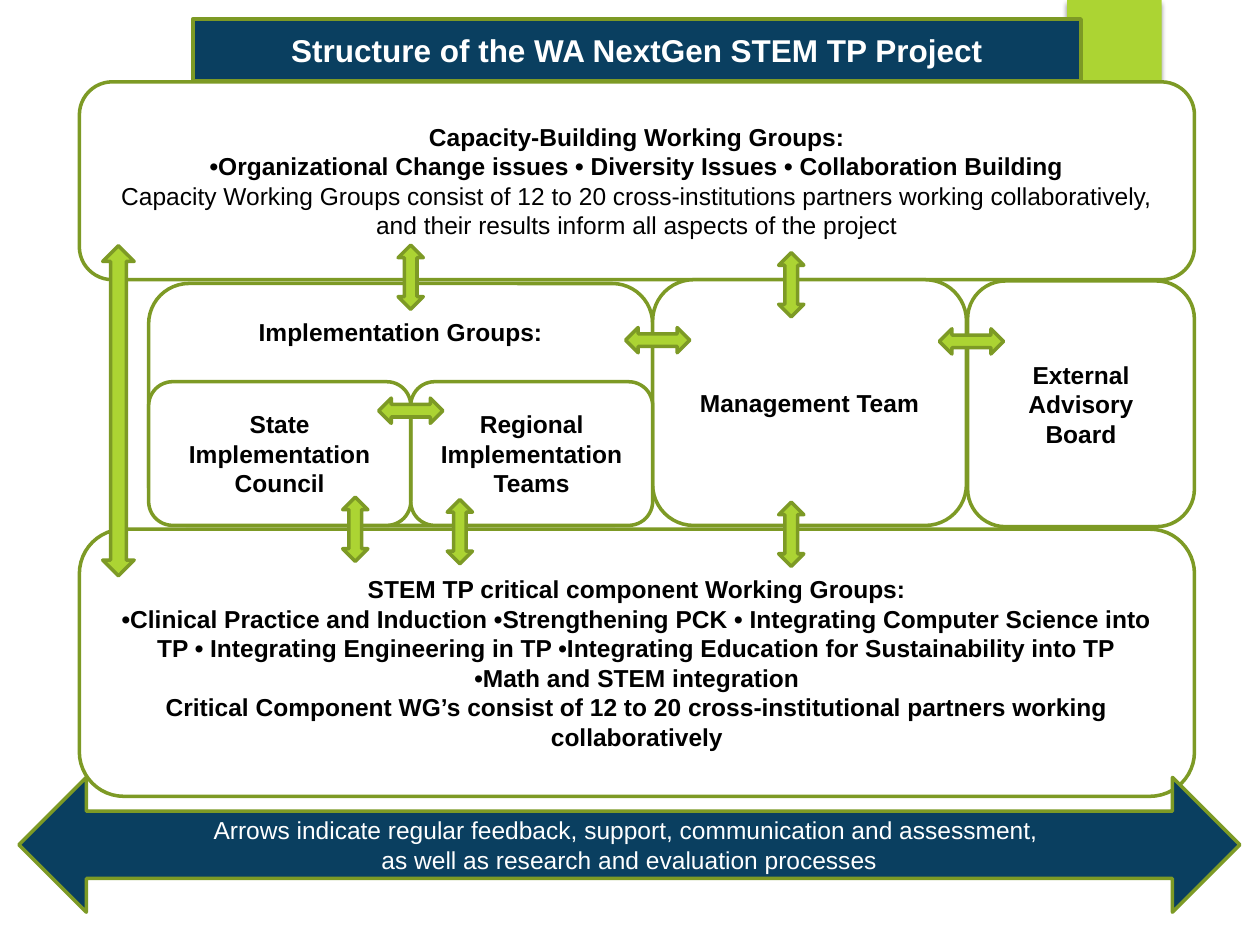
from typing import NamedTuple

from lxml.etree import SubElement
from pptx import Presentation
from pptx.dml.color import RGBColor
from pptx.enum.shapes import MSO_SHAPE
from pptx.enum.text import MSO_ANCHOR, MSO_AUTO_SIZE, PP_ALIGN
from pptx.oxml import parse_xml
from pptx.oxml.ns import nsdecls
from pptx.util import Inches, Pt

HUES = {"navy": "0A3F60", "lime": "ACD433", "olive": "7D9A25",
        "white": "FFFFFF", "black": "000000"}
HEAD = 0.51  # length of a short arrow


class Box(NamedTuple):
    left: float
    top: float
    width: float
    height: float
    lines: list[str]
    plain: tuple[int, ...] = ()  # lines that are not bold
    inset: float | None = None   # top margin of text set at the top


class Arrow(NamedTuple):
    x: float  # centre
    y: float
    flat: bool = False
    long: float = HEAD
    thick: float = 0.2


def hue(name: str) -> RGBColor:
    return RGBColor.from_string(HUES[name])


def paint(shape, fill: str, edge: bool = True) -> None:
    shape.shadow.inherit = False
    shape.fill.solid()
    shape.fill.fore_color.rgb = hue(fill)
    if edge:
        shape.line.color.rgb = hue("olive")
        shape.line.width = Pt(2)
    else:
        shape.line.fill.background()


def place(slide, kind, left: float, top: float, width: float, height: float):
    return slide.shapes.add_shape(
        kind, Inches(left), Inches(top), Inches(width), Inches(height))


def write(shape, lines: list[str], size: int, color: str,
          plain: tuple[int, ...] = ()) -> None:
    frame = shape.text_frame
    frame.word_wrap = True
    frame.auto_size = MSO_AUTO_SIZE.NONE
    frame.vertical_anchor = MSO_ANCHOR.MIDDLE
    frame.text = "\n".join(lines)
    for num, para in enumerate(frame.paragraphs):
        para.alignment = PP_ALIGN.CENTER
        font = para.font
        font.name, font.size = "Arial", Pt(size)
        font.bold = num not in plain
        font.color.rgb = hue(color)


def draw_box(slide, box: Box) -> None:
    shape = place(slide, MSO_SHAPE.ROUNDED_RECTANGLE, *box[:4])
    paint(shape, "white")
    write(shape, box.lines, 14, "black", box.plain)
    if box.inset is not None:
        shape.text_frame.vertical_anchor = MSO_ANCHOR.TOP
        shape.text_frame.margin_top = Inches(box.inset)


def draw_arrow(slide, arrow: Arrow) -> None:
    kind, wide, high = MSO_SHAPE.UP_DOWN_ARROW, arrow.thick, arrow.long
    if arrow.flat:
        kind, wide, high = MSO_SHAPE.LEFT_RIGHT_ARROW, high, wide
    shape = place(slide, kind, arrow.x - wide / 2, arrow.y - high / 2, wide, high)
    paint(shape, "lime")


BOXES = [
    Box(0.63, 0.65, 8.85, 1.57, [
        "Capacity-Building Working Groups:",
        "•Organizational Change issues • Diversity Issues • Collaboration Building",
        "Capacity Working Groups consist of 12 to 20 cross-institutions partners "
        "working collaboratively, and their results inform all aspects of the project",
    ], plain=(2,)),
    Box(1.18, 2.25, 4, 1.92, ["Implementation Groups:"], inset=0.17),
    Box(5.18, 2.22, 2.49, 1.95, ["Management Team"]),
    Box(7.68, 2.23, 1.8, 1.95, ["External Advisory Board"]),
    Box(3.26, 3.03, 1.92, 1.14, ["Regional Implementation Teams"]),
    Box(0.63, 4.2, 8.85, 2.12, [
        "STEM TP critical component Working Groups:",
        "•Clinical Practice and Induction •Strengthening PCK • Integrating "
        "Computer Science into TP • Integrating Engineering in TP "
        "•Integrating Education for Sustainability into TP",
        "•Math and STEM integration",
        "Critical Component WG’s consist of 12 to 20 cross-institutional "
        "partners working collaboratively",
    ]),
    Box(1.18, 3.03, 2.08, 1.14, ["State Implementation Council"]),
]

ARROWS = [
    Arrow(0.94, 3.26, long=2.62, thick=0.25),
    Arrow(3.26, 2.2),
    Arrow(3.26, 3.26, flat=True),
    Arrow(6.28, 2.26),
    Arrow(2.82, 4.2),
    Arrow(3.65, 4.22),
    Arrow(6.28, 4.24),
    Arrow(5.22, 2.7, flat=True),
    Arrow(7.71, 2.71, flat=True),
]


def main() -> None:
    deck = Presentation()
    deck.slide_width, deck.slide_height = Inches(10), Inches(7.5)
    slide = deck.slides.add_slide(deck.slide_layouts[5])

    # Title bar
    title = slide.shapes.title
    title.left, title.top = Inches(1.53), Inches(0.15)
    title.width, title.height = Inches(7.05), Inches(0.49)
    paint(title, "navy")
    write(title, ["Structure of the WA NextGen STEM TP Project"], 18, "white")

    # Corner tab, behind the title, with a soft shadow
    tab = place(slide, MSO_SHAPE.RECTANGLE, 8.47, 0, 0.75, 1.2)
    paint(tab, "lime", edge=False)
    glow = parse_xml(
        f'<a:outerShdw {nsdecls("a")} blurRad="{Pt(3)}" dist="{Pt(2)}" '
        'dir="5400000" rotWithShape="0"/>')
    tint = SubElement(glow, "{%s}srgbClr" % glow.nsmap["a"], val=HUES["black"])
    SubElement(tint, "{%s}alpha" % glow.nsmap["a"], val="44000")
    tab._element.spPr.find("{*}effectLst").append(glow)
    title._element.addprevious(tab._element)

    # Groups
    for box in BOXES:
        draw_box(slide, box)

    # Legend arrow along the foot
    foot = place(slide, MSO_SHAPE.LEFT_RIGHT_ARROW, 0.15, 6.17, 9.69, 1.07)
    paint(foot, "navy")
    write(foot, [
        "Arrows indicate regular feedback, support, communication and assessment, ",
        "as well as research and evaluation processes",
    ], 14, "white", plain=(0, 1))

    # Feedback arrows
    for arrow in ARROWS:
        draw_arrow(slide, arrow)

    deck.save("out.pptx")


if __name__ == "__main__":
    main()
